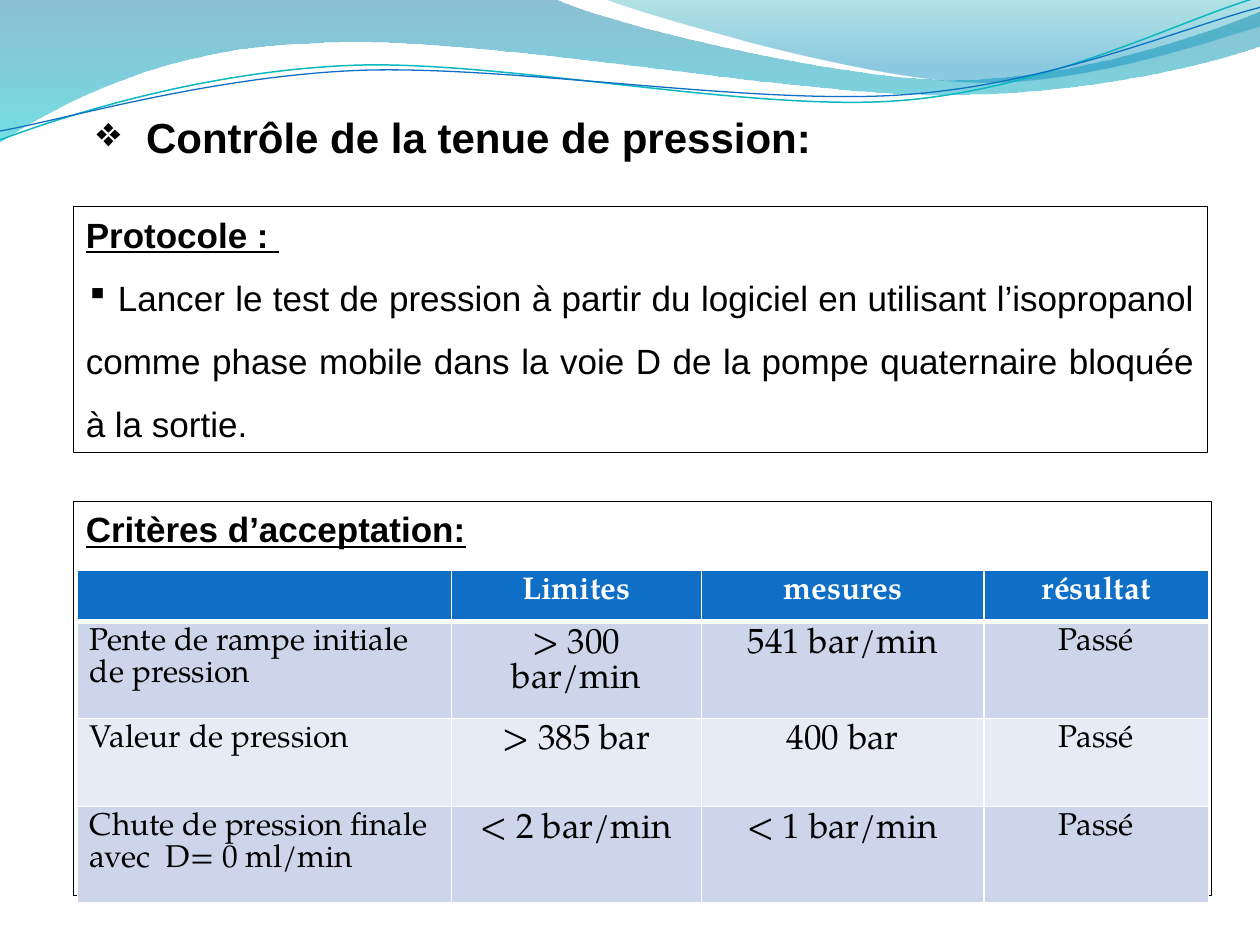
import math

from lxml import etree
from pptx import Presentation
from pptx import util as u
from pptx.dml.color import RGBColor
from pptx.enum import shapes, text
from pptx.oxml import ns

COLORS = dict(black="000000", white="FFFFFF", header="0F6FC6", odd="CCD5EA", even="E7EBF5",
              teal="0AB8BF", blue="0F6FC6", deep="0074A1", cyan="00C6CF",
              sea="00A1A9", sky="008BBF")
SANS, SERIF, SYMBOLS = "Arial", "TeX Gyre Pagella", "OpenSymbol"
HEADING = dict(size=u.Pt(20), name=SANS, bold=True, underline=True)

# Curves in cm: a start point, then segments of one point (line) or three (Bézier).
BACK_WAVE = [[(0, 0)], [(11.18, -0.03)],
             [(12.09, 0.43), (16.87, 1.6), (19.25, 1.6)],
             [(21.67, 1.6), (24.33, 0.66), (25.4, 0.23)], [(25.43, 0.91)],
             [(24.97, 1.12), (22.1, 1.93), (18.95, 1.91)],
             [(15.8, 1.91), (9.7, 0.71), (6.53, 0.86)],
             [(3.28, 0.91), (1.17, 2.11), (-0.03, 2.87)]]
FRONT_WAVE = [[(12.17, -0.03)], [(12.93, 0.28), (17.32, 1.57), (19.53, 1.65)],
              [(21.74, 1.75), (24.41, 0.81), (25.4, 0.53)], [(25.4, 0)]]
TEAL_LINE = [[(0, 2.82)], [(1.22, 2.36), (4.01, 1.45), (7.04, 1.32)],
             [(10.03, 1.19), (15.06, 2.26), (18.11, 2.03)],
             [(21.16, 1.8), (23.83, 0.38), (25.35, -0.05)]]
BLUE_LINE = [[(0, 2.64)], [(1.19, 2.44), (4.17, 1.55), (7.19, 1.42)],
             [(10.24, 1.3), (15.16, 2.13), (18.21, 1.91)],
             [(21.23, 1.7), (23.9, 0.53), (25.4, 0.15)]]
TILT = -2.7
LINE_CENTRE = (12.68, 1.48)

ROWS = [("", "Limites", "mesures", "résultat"),
        ("Pente de rampe initiale de pression", "> 300 bar/min", "541 bar/min", "Passé"),
        ("Valeur de pression", "> 385 bar", "400 bar", "Passé"),
        ("Chute de pression finale avec  D= 0 ml/min", "< 2 bar/min", "< 1 bar/min", "Passé")]
COL_WIDTHS = (7.54, 5.04, 5.7, 4.52)
ROW_HEIGHTS = (1.03, 1.93, 1.78, 1.93)


def rgb(name):
    return RGBColor.from_string(COLORS[name])


def sub(parent, tag, **attrs):
    return etree.SubElement(parent, ns.qn(tag), attrs)


def set_all(obj, values):
    for key, value in values.items():
        setattr(obj, key, value)


def add_run(p, words, color="black", **font):
    r = p.add_run()
    r.text = words
    set_all(r.font, font)
    r.font.color.rgb = rgb(color)


def set_bullet(p, char, indent=0):
    pPr = p._p.get_or_add_pPr()
    pPr.set("marL", str(u.Cm(indent)))
    pPr.set("indent", str(-u.Cm(indent)))
    sub(pPr, "a:buFont", typeface=SYMBOLS)
    sub(pPr, "a:buChar", char=char)


def add_curve(s, segments, close):
    """Build the outline from the end points, then bend its Bézier segments."""
    ends = [tuple(map(u.Cm, seg[-1])) for seg in segments]
    fb = s.shapes.build_freeform(*ends[0])
    fb.add_line_segments(ends[1:], close=close)
    sp = fb.convert_to_shape()
    sp.shadow.inherit = False
    for line, seg in zip(list(sp._element.iter(ns.qn("a:lnTo"))), segments[1:]):
        if len(seg) == 3:
            bend = etree.Element(ns.qn("a:cubicBezTo"))
            for x, y in seg:
                sub(bend, "a:pt", x=str(u.Cm(x) - sp.left), y=str(u.Cm(y) - sp.top))
            line.getparent().replace(line, bend)
    return sp


def add_wave(s, segments, stops):
    """Filled wave; each stop is (position, colour, opacity in percent)."""
    sp = add_curve(s, segments, True)
    sp.line.fill.background()
    sp.fill.gradient()
    sp.fill.gradient_angle = 270
    for stop, (pos, color, opacity) in zip(sp.fill.gradient_stops, stops):
        stop.position = pos
        stop.color.rgb = rgb(color)
        sub(stop._gs[0], "a:alpha", val=str(opacity * 1000))


def turn(point, degrees):
    """Turn a point about the centre of the lines."""
    a = math.radians(degrees)
    cx, cy = LINE_CENTRE
    dx, dy = point[0] - cx, point[1] - cy
    return (cx + dx * math.cos(a) - dy * math.sin(a),
            cy + dx * math.sin(a) + dy * math.cos(a))


def add_tilted_line(s, segments, color, width):
    level = [[turn(pt, -TILT) for pt in seg] for seg in segments]
    sp = add_curve(s, level, False)
    sp.rotation = TILT
    sp.fill.background()
    sp.line.color.rgb = rgb(color)
    sp.line.width = u.Pt(width)


def add_banner(s):
    add_wave(s, BACK_WAVE, [(0, "deep", 45), (1, "cyan", 55)])
    add_wave(s, FRONT_WAVE, [(0, "sea", 30), (0.8, "sky", 45)])
    add_tilted_line(s, TEAL_LINE, "teal", 0.85)
    add_tilted_line(s, BLUE_LINE, "blue", 0.75)


def add_title(s, x, y, w, h):
    tf = s.shapes.add_textbox(*map(u.Cm, (x, y, w, h))).text_frame
    tf.word_wrap = True
    p = tf.paragraphs[0]
    set_bullet(p, "❖", 0.76)
    add_run(p, " ", size=u.Pt(24), name=SANS)
    add_run(p, "Contrôle de la tenue de pression:", size=u.Pt(24), name=SANS, bold=True)


def add_panel(s, x, y, w, h, heading):
    """Outlined box with an underlined heading; returns its text frame."""
    sp = s.shapes.add_shape(shapes.MSO_SHAPE.RECTANGLE, *map(u.Cm, (x, y, w, h)))
    sp.shadow.inherit = False
    sp.fill.background()
    sp.line.color.rgb = rgb("black")
    sp.line.width = u.Pt(0.75)
    tf = sp.text_frame
    set_all(tf, dict(word_wrap=True, vertical_anchor=text.MSO_ANCHOR.TOP))
    p = tf.paragraphs[0]
    p.alignment = text.PP_ALIGN.LEFT
    add_run(p, heading, **HEADING)
    return tf


def add_protocol(s, x, y, w, h):
    tf = add_panel(s, x, y, w, h, "Protocole : ")
    p = tf.add_paragraph()
    set_all(p, dict(alignment=text.PP_ALIGN.JUSTIFY, line_spacing=1.5))
    set_bullet(p, "▪")
    add_run(p, " ", size=u.Pt(18), name=SERIF)
    add_run(p, "Lancer le test de pression à partir du logiciel en utilisant l’isopropanol "
               "comme phase mobile dans la voie D de la pompe quaternaire bloquée à la sortie.",
            size=u.Pt(20), name=SANS)


def set_borders(cell, **widths):
    tcPr = cell._tc.get_or_add_tcPr()
    for side, width in widths.items():
        ln = sub(tcPr, "a:ln" + side, w=str(u.Pt(width)))
        sub(sub(ln, "a:solidFill"), "a:srgbClr", val=COLORS["white"])


def add_results(s, x, y):
    box = map(u.Cm, (x, y, sum(COL_WIDTHS), sum(ROW_HEIGHTS)))
    table = s.shapes.add_table(len(ROWS), len(COL_WIDTHS), *box).table
    for col, width in zip(table.columns, COL_WIDTHS):
        col.width = u.Cm(width)
    for i, (row, height) in enumerate(zip(table.rows, ROW_HEIGHTS)):
        row.height = u.Cm(height)
        head = i == 0
        for j, (cell, words) in enumerate(zip(row.cells, ROWS[i])):
            set_borders(cell, L=1, R=1, T=3 if i == 1 else 1, B=3 if head else 1)
            cell.fill.solid()
            cell.fill.fore_color.rgb = rgb("header" if head else "odd" if i % 2 else "even")
            p = cell.text_frame.paragraphs[0]
            p.alignment = text.PP_ALIGN.CENTER if j else text.PP_ALIGN.LEFT
            if words:
                add_run(p, words, "white" if head else "black", name=SERIF, bold=head,
                        size=u.Pt(20 if not head and j in (1, 2) else 18))


def add_criteria(s, x, y, w, h):
    add_panel(s, x, y, w, h, "Critères d’acceptation:")
    add_results(s, x + 0.08, y + 1.39)


def main():
    prs = Presentation()
    prs.slide_width, prs.slide_height = u.Cm(25.4), u.Cm(19.05)
    s = prs.slides.add_slide(prs.slide_layouts[6])
    add_banner(s)
    add_title(s, 1.7, 2.13, 22.91, 15.72)
    add_protocol(s, 1.48, 4.17, 22.86, 4.95)
    add_criteria(s, 1.48, 10.11, 22.94, 7.95)
    prs.save("out.pptx")


if __name__ == "__main__":
    main()
